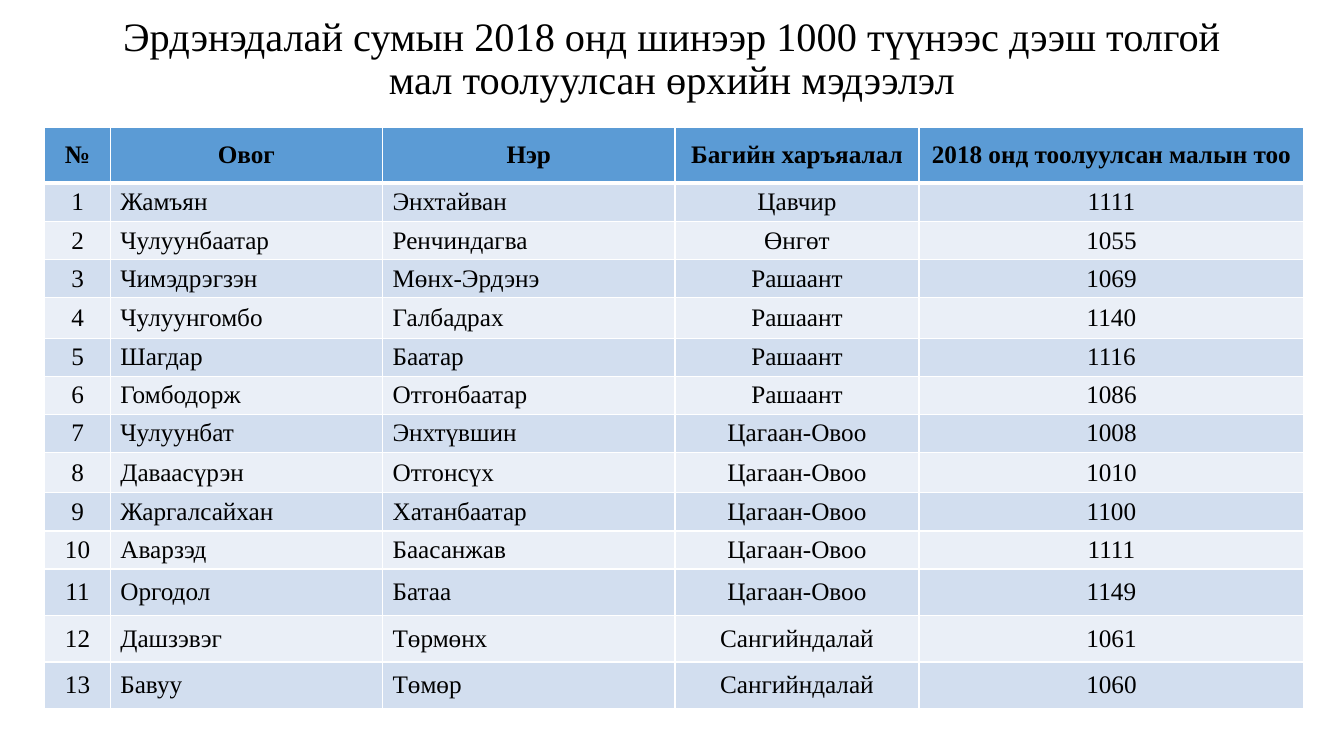
from pptx import Presentation
from pptx.dml.color import RGBColor
from pptx.enum.text import MSO_ANCHOR as Anchor, MSO_AUTO_SIZE as AutoSize, PP_ALIGN as Align
from pptx.oxml.ns import qn
from pptx.util import Cm, Pt
from lxml.etree import SubElement

TITLE = "Эрдэнэдалай сумын 2018 онд шинээр 1000 түүнээс дээш толгой мал тоолуулсан өрхийн мэдээлэл"
HEADER = ("№", "Овог", "Нэр", "Багийн харъяалал", "2018 онд тоолуулсан малын тоо")
HOUSEHOLDS = [
    ("Жамъян", "Энхтайван", "Цавчир", 1111),
    ("Чулуунбаатар", "Ренчиндагва", "Өнгөт", 1055),
    ("Чимэдрэгзэн", "Мөнх-Эрдэнэ", "Рашаант", 1069),
    ("Чулуунгомбо", "Галбадрах", "Рашаант", 1140),
    ("Шагдар", "Баатар", "Рашаант", 1116),
    ("Гомбодорж", "Отгонбаатар", "Рашаант", 1086),
    ("Чулуунбат", "Энхтүвшин", "Цагаан-Овоо", 1008),
    ("Даваасүрэн", "Отгонсүх", "Цагаан-Овоо", 1010),
    ("Жаргалсайхан", "Хатанбаатар", "Цагаан-Овоо", 1100),
    ("Аварзэд", "Баасанжав", "Цагаан-Овоо", 1111),
    ("Оргодол", "Батаа", "Цагаан-Овоо", 1149),
    ("Дашзэвэг", "Төрмөнх", "Сангийндалай", 1061),
    ("Бавуу", "Төмөр", "Сангийндалай", 1060),
]
COL_WIDTHS = (1.65, 6.86, 7.37, 6.15, 9.7)
ROW, HEADER_ROW, TALL_ROW, LAST_ROWS = 0.96, 1.42, 1.02, 1.17
ROW_HEIGHTS = [HEADER_ROW] + [ROW] * 3 + [TALL_ROW] + [ROW] * 3 + [TALL_ROW] + [ROW] * 2 + [LAST_ROWS] * 3
HEADER_FILL, BANDS = "5B9BD5", ("D2DEEF", "EAEFF7")
WHITE, BLACK = "FFFFFF", "000000"
LEFT_COLUMNS = (1, 2)


def color(value):
    return RGBColor.from_string(value)


def set_text(tf, text, align, size, bold=False):
    tf.vertical_anchor = Anchor.MIDDLE
    p = tf.paragraphs[0]
    p.alignment = align
    r = p.add_run()
    r.text = text
    r.font.color.rgb = color(BLACK)
    for name, value in {"name": "Times New Roman", "size": Pt(size), "bold": bold}.items():
        setattr(r.font, name, value)
    return p


def set_borders(cell, bottom):
    tc_pr = cell._tc.get_or_add_tcPr()
    for side, width in {"L": 1, "R": 1, "T": 1, "B": bottom}.items():
        ln = SubElement(tc_pr, qn(f"a:ln{side}"), w=str(Pt(width)))
        SubElement(SubElement(ln, qn("a:solidFill")), qn("a:srgbClr"), val=WHITE)


prs = Presentation()
prs.slide_width, prs.slide_height = Cm(33.87), Cm(19.05)
s = prs.slides.add_slide(prs.slide_layouts[5])

title = s.shapes.title
for name, value in {"left": 2.33, "top": 0.53, "width": 29.21, "height": 1.96}.items():
    setattr(title, name, Cm(value))
title.text_frame.auto_size = AutoSize.NONE
title.text_frame.word_wrap = True
set_text(title.text_frame, TITLE, Align.CENTER, 28.8).line_spacing = 0.9

rows = [HEADER] + [(i, *household) for i, household in enumerate(HOUSEHOLDS, 1)]
table = s.shapes.add_table(len(rows), len(HEADER), Cm(1.13), Cm(3.2),
                           Cm(sum(COL_WIDTHS)), Cm(sum(ROW_HEIGHTS))).table
for column, width in zip(table.columns, COL_WIDTHS):
    column.width = Cm(width)
for i, (values, height) in enumerate(zip(rows, ROW_HEIGHTS)):
    table.rows[i].height = Cm(height)
    is_header = i == 0
    for j, value in enumerate(values):
        cell = table.cell(i, j)
        cell.vertical_anchor = Anchor.MIDDLE
        align = Align.LEFT if j in LEFT_COLUMNS and not is_header else Align.CENTER
        set_text(cell.text_frame, str(value), align, 18, is_header)
        set_borders(cell, 3 if is_header else 1)
        cell.fill.solid()
        cell.fill.fore_color.rgb = color(HEADER_FILL if is_header else BANDS[(i - 1) % 2])

prs.save("out.pptx")
